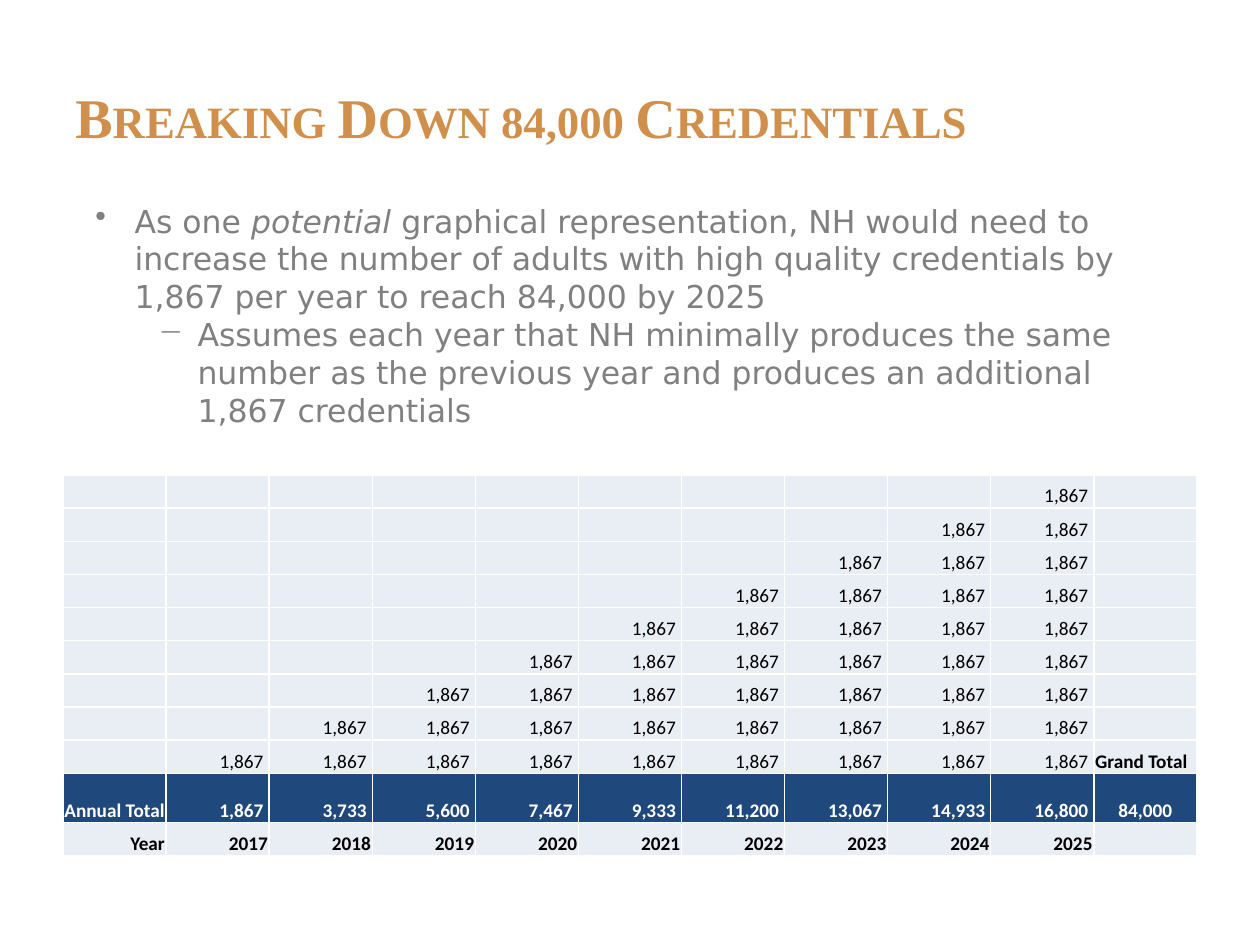
from lxml import etree
from pptx import Presentation
from pptx.dml.color import RGBColor
from pptx.enum.text import MSO_ANCHOR, PP_ALIGN
from pptx.oxml.ns import qn
from pptx.util import Inches, Pt

MIDDLE, BOTTOM = MSO_ANCHOR.MIDDLE, MSO_ANCHOR.BOTTOM
LEFT, CENTER, RIGHT = PP_ALIGN.LEFT, PP_ALIGN.CENTER, PP_ALIGN.RIGHT

COLORS = {
    "title": "D0904C",
    "body": "808080",
    "pale": "E9EDF4",
    "navy": "1F497D",
    "white": "FFFFFF",
    "black": "000000",
}
GOAL = 84000
YEARS = range(2017, 2026)
COUNT = len(YEARS)
STEP = GOAL / sum(range(1, COUNT + 1))


def rgb(name):
    return RGBColor.from_string(COLORS[name])


def style_font(font, name, size, color, bold=False):
    font.name = name
    font.size = Pt(size)
    font.color.rgb = rgb(color)
    font.bold = bold


def add_text_box(s, left, top, width, height):
    box = s.shapes.add_textbox(Inches(left), Inches(top), Inches(width), Inches(height))
    tf = box.text_frame
    tf.word_wrap = True
    return tf


def add_title(s, text):
    tf = add_text_box(s, 0.5, 0.3, 9, 1.25)
    tf.vertical_anchor = MIDDLE
    tf.text = text
    r = tf.paragraphs[0].runs[0]
    style_font(r.font, "Times New Roman", 32, "title", True)
    r._r.get_or_add_rPr().set("cap", "small")


def add_bullet(p, level, char, indent, parts):
    p.level = level
    pPr = p._p.get_or_add_pPr()
    pPr.set("marL", str(Inches(indent)))
    pPr.set("indent", str(Inches(-0.31)))
    etree.SubElement(pPr, qn("a:buChar"), char=char)
    for text, italic in parts:
        r = p.add_run()
        r.text = text
        style_font(r.font, "DejaVu Sans", 18, "body")
        r.font.italic = italic


def add_border(cell):
    tcPr = cell._tc.get_or_add_tcPr()
    for i, side in enumerate(("a:lnL", "a:lnR", "a:lnT", "a:lnB")):
        ln = etree.Element(qn(side), w=str(Pt(1)))
        fill = etree.SubElement(ln, qn("a:solidFill"))
        etree.SubElement(fill, qn("a:srgbClr"), val=COLORS["white"])
        tcPr.insert(i, ln)


def fill_cell(cell, text, fill, color, bold, align):
    cell.margin_left = cell.margin_right = cell.margin_top = Inches(0.01)
    cell.margin_bottom = 0
    cell.vertical_anchor = BOTTOM
    cell.fill.solid()
    cell.fill.fore_color.rgb = rgb(fill)
    add_border(cell)
    p = cell.text_frame.paragraphs[0]
    if text:
        p.text = text
        p.alignment = align
        style_font(p.runs[0].font, "Calibri", 11, color, bold)
    else:
        etree.SubElement(p._p, qn("a:endParaRPr"), sz="1100")


def number(value):
    return f" {value:,.0f} "


def table_rows():
    rows = []
    for i in range(COUNT):
        blanks = COUNT - i
        label = "Grand Total" if i == COUNT - 1 else ""
        rows.append([""] * blanks + [number(STEP)] * (i + 1) + [label])
    totals = [number(STEP * n) for n in range(1, COUNT + 1)]
    rows.append(["Annual Total"] + totals + [number(GOAL)])
    rows.append(["Year"] + [str(year) for year in YEARS] + [""])
    return rows


def add_credentials_table(s):
    rows = table_rows()
    n_rows, n_cols = len(rows), len(rows[0])
    height, total_height = 3.02, 0.39
    frame = s.shapes.add_table(n_rows, n_cols, Inches(0.5), Inches(3.77), Inches(9), Inches(height))
    table = frame.table
    table.first_row = table.horz_banding = False
    for col in table.columns:
        col.width = Inches(9 / n_cols)
    last = n_cols - 1
    for i, values in enumerate(rows):
        is_total = i == COUNT
        table.rows[i].height = Inches(total_height if is_total else (height - total_height) / (n_rows - 1))
        fill, color = ("navy", "white") if is_total else ("pale", "black")
        for j, text in enumerate(values):
            align = RIGHT if j < last else CENTER if is_total else LEFT
            fill_cell(table.cell(i, j), text, fill, color, i >= COUNT or j == last, align)


def main():
    prs = Presentation()
    prs.slide_width, prs.slide_height = Inches(10), Inches(7.5)
    s = prs.slides.add_slide(prs.slide_layouts[6])
    add_credentials_table(s)
    add_title(s, "Breaking Down 84,000 Credentials")
    tf = add_text_box(s, 0.66, 1.55, 8.57, 1.92)
    add_bullet(tf.paragraphs[0], 0, "•", 0.31, [
        ("As one ", False),
        ("potential", True),
        (" graphical representation, NH would need to increase the number of adults "
         "with high quality credentials by 1,867 per year to reach 84,000 by 2025", False),
    ])
    add_bullet(tf.add_paragraph(), 1, "−", 0.81, [
        ("Assumes each year that NH minimally produces the same number as the previous "
         "year and produces an additional 1,867 credentials", False),
    ])
    prs.save("out.pptx")


if __name__ == "__main__":
    main()
